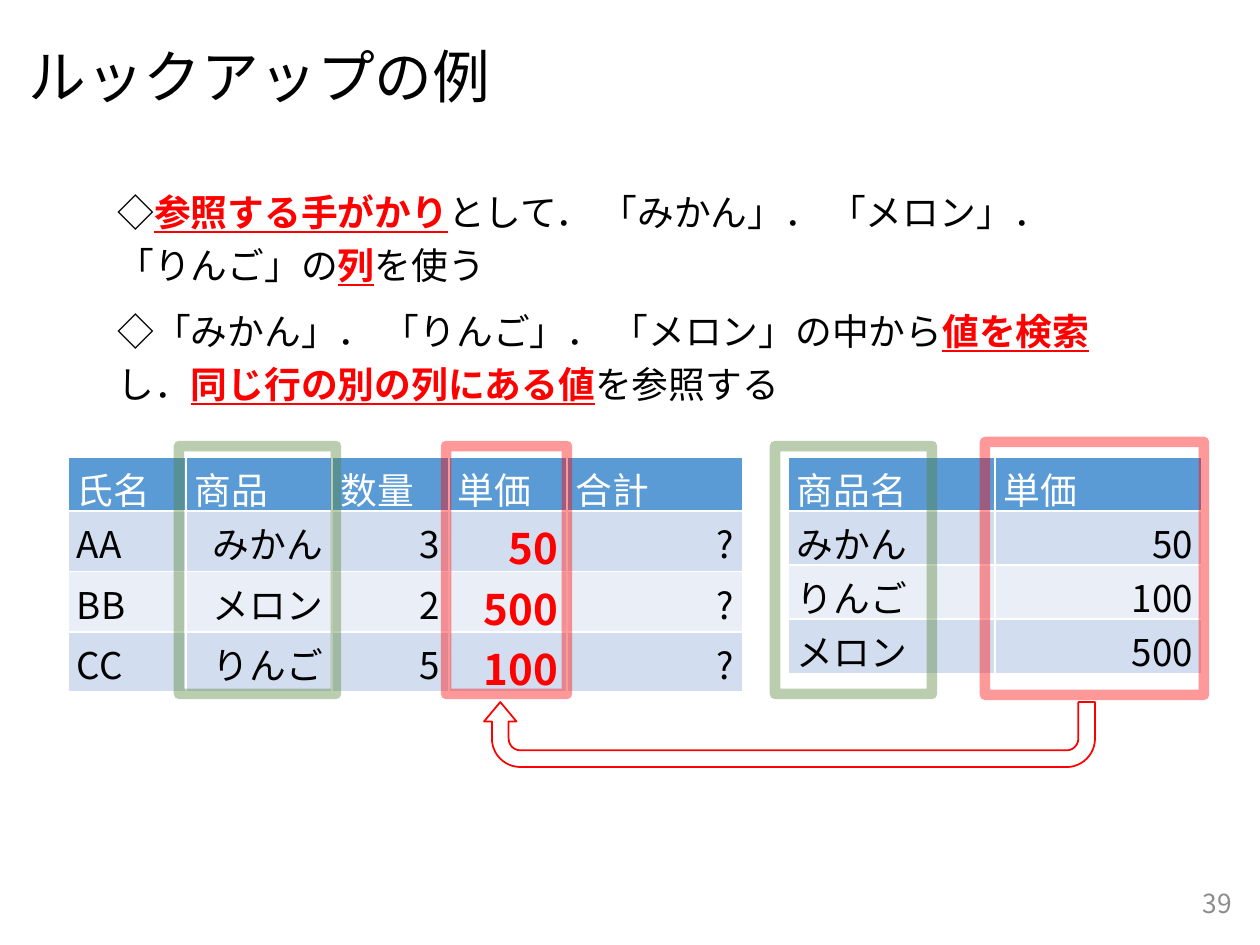
from lxml import etree
from pptx import Presentation
from pptx.dml.color import RGBColor
from pptx.enum.shapes import MSO_SHAPE
from pptx.enum.text import MSO_ANCHOR, PP_ALIGN
from pptx.oxml.ns import qn
from pptx.util import Pt

PX = 914400 / 126
RECT, UTURN = MSO_SHAPE.RECTANGLE, MSO_SHAPE.U_TURN_ARROW
LEFT, RIGHT = PP_ALIGN.LEFT, PP_ALIGN.RIGHT
TOP, MIDDLE = MSO_ANCHOR.TOP, MSO_ANCHOR.MIDDLE
RED, GREEN, BLACK, WHITE = "FF0000", "548235", "000000", "FFFFFF"
BODY_FONT, TABLE_FONT = "Cabin", "Noto Sans CJK JP"


def px(*values):
    return [round(v * PX) for v in values]


def style(font, color, size=None, name=None, bold=False):
    font.color.rgb = RGBColor.from_string(color)
    font.bold = bold
    if size:
        font.size = Pt(size)
        font.name = name


prs = Presentation()
prs.slide_width, prs.slide_height = px(1260, 945)
s = prs.slides.add_slide(prs.slide_layouts[6])

# Title, explanation and page number; True marks emphasised runs
title = [[("ルックアップの例", False)]]
body = [
    [("◇", False), ("参照する手がかり", True),
     ("として． 「みかん」． 「メロン」． 「りんご」の", False),
     ("列", True), ("を使う", False)],
    [("◇「みかん」． 「りんご」． 「メロン」の中から", False),
     ("値を検索", True), ("し．", False),
     ("同じ行の別の列にある値", True), ("を参照する", False)],
]
number = [[("39", False)]]
texts = [
    (title, (16, 26, 1216, 108), MIDDLE, LEFT, 33, BODY_FONT, BLACK, 0.9, 0),
    (body, (105, 175, 1013, 534), TOP, LEFT, 21, BODY_FONT, BLACK, 1.2, 7.5),
    (number, (960, 878, 284, 50), MIDDLE, RIGHT, 15, TABLE_FONT, "8C8C8C", 1, 0),
]
for paragraphs, box, anchor, align, size, font, color, spacing, before in texts:
    tf = s.shapes.add_textbox(*px(*box)).text_frame
    tf.word_wrap = True
    tf.vertical_anchor = anchor
    for i, runs in enumerate(paragraphs):
        p = tf.add_paragraph() if i else tf.paragraphs[0]
        p.alignment = align
        p.line_spacing = spacing
        p.space_before = Pt(before)
        style(p.font, color, size, font)
        for text, emphasis in runs:
            r = p.add_run()
            r.text = text
            if emphasis:
                style(r.font, RED, bold=True)
                r.font.underline = True

# Price list and order table
prices = [("商品名", "単価"), ("みかん", "50"), ("りんご", "100"), ("メロン", "500")]
orders = [
    ("氏名", "商品", "数量", "単価", "合計"),
    ("AA", "みかん", "3", "50", "?"),
    ("BB", "メロン", "2", "500", "?"),
    ("CC", "りんご", "5", "100", "?"),
]
tables = [
    (prices, 788, (207, 207), 53, None),
    (orders, 68, (118, 146, 117, 118, 176), 59, 3),
]
for rows, left, widths, row_height, result_col in tables:
    heights = [53] + [row_height] * (len(rows) - 1)
    box = px(left, 457, sum(widths), sum(heights))
    table = s.shapes.add_table(len(rows), len(widths), *box).table
    for col, width in zip(table.columns, px(*widths)):
        col.width = width
    for row, height in zip(table.rows, px(*heights)):
        row.height = height
    for i, values in enumerate(rows):
        for j, value in enumerate(values):
            cell = table.cell(i, j)
            cell.margin_left, cell.margin_right = px(9, 9)
            cell.margin_top, cell.margin_bottom = px(5, 5)
            fill = "5B9BD5" if i == 0 else "D2DEEF" if i % 2 else "EAEFF7"
            cell.fill.solid()
            cell.fill.fore_color.rgb = RGBColor.from_string(fill)
            p = cell.text_frame.paragraphs[0]
            p.add_run().text = value
            p.alignment = RIGHT if i and j else LEFT
            if i and j == result_col:
                style(p.font, RED, 24, TABLE_FONT, bold=True)
            else:
                style(p.font, BLACK if i else WHITE, 21, TABLE_FONT)

# Translucent frames around the matching columns, then the lookup arrow
outlines = [
    (RECT, (985, 442, 219, 253), RED, 6),
    (RECT, (446, 446, 121, 248), RED, 6),
    (RECT, (179, 446, 157, 248), GREEN, 6),
    (RECT, (775, 446, 157, 248), GREEN, 6),
    (UTURN, (484, 702, 611, 65), RED, 1),
]
for kind, box, color, width in outlines:
    sp = s.shapes.add_shape(kind, *px(*box))
    sp.shadow.inherit = False
    sp.fill.background()
    sp.line.color.rgb = RGBColor.from_string(color)
    sp.line.width = Pt(width)
    if kind == RECT:
        rgb = sp.element.spPr.find(".//" + qn("a:srgbClr"))
        etree.SubElement(rgb, qn("a:alpha"), val="40000")
    else:
        sp.rotation = 180
        for i, value in enumerate((0.257, 0.25, 0.299, 0.438, 1)):
            sp.adjustments[i] = value

prs.save("out.pptx")
